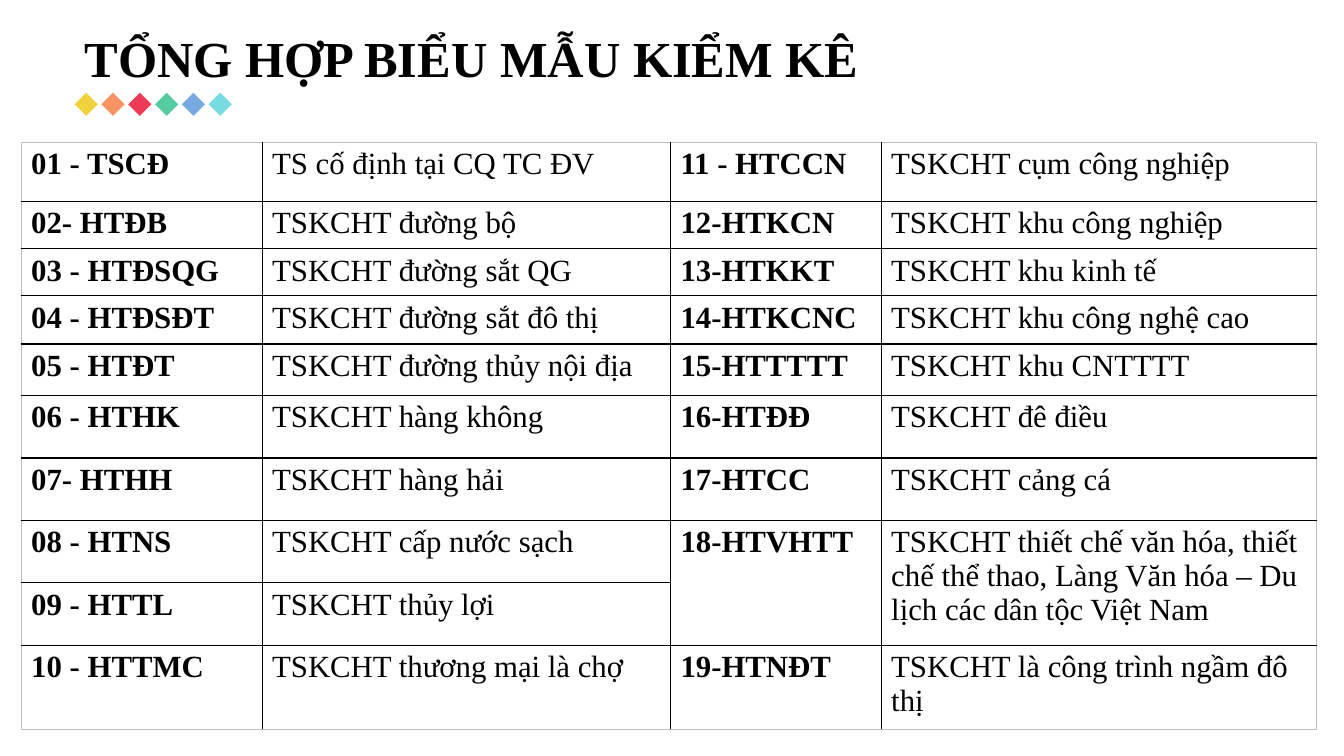
from lxml import etree
from pptx import Presentation
from pptx.dml.color import RGBColor
from pptx.enum import shapes, text
from pptx.oxml.ns import qn
from pptx.util import Inches, Pt

FONT = "Times New Roman"
BLACK, GREY = "000000", "BFBFBF"
TITLE = "TỔNG HỢP BIỂU MẪU KIỂM KÊ"
DIAMONDS = ["F0D23F", "F79465", "ED3B55", "54CBA0", "78AAE1", "77DBE1"]
COLUMN_WIDTHS = [2.39, 4.05, 2.09, 4.32]
ROW_HEIGHTS = [0.59, 0.46, 0.46, 0.48, 0.51, 0.62, 0.62, 0.62, 0.62, 0.8]
FORMS = [
    ("01 - TSCĐ", "TS cố định tại CQ TC ĐV", "11 - HTCCN", "TSKCHT cụm công nghiệp"),
    ("02- HTĐB", "TSKCHT đường bộ", "12-HTKCN", "TSKCHT khu công nghiệp"),
    ("03 - HTĐSQG", "TSKCHT đường sắt QG", "13-HTKKT", "TSKCHT khu kinh tế"),
    ("04 - HTĐSĐT", "TSKCHT đường sắt đô thị", "14-HTKCNC", "TSKCHT khu công nghệ cao"),
    ("05 - HTĐT", "TSKCHT đường thủy nội địa", "15-HTTTTT", "TSKCHT khu CNTTTT"),
    ("06 - HTHK", "TSKCHT hàng không", "16-HTĐĐ", "TSKCHT đê điều"),
    ("07- HTHH", "TSKCHT hàng hải", "17-HTCC", "TSKCHT cảng cá"),
    ("08 - HTNS", "TSKCHT cấp nước sạch", "18-HTVHTT",
     "TSKCHT thiết chế văn hóa, thiết chế thể thao, Làng Văn hóa – Du lịch các dân tộc Việt Nam"),
    ("09 - HTTL", "TSKCHT thủy lợi", None, None),  # right half merges with the row above
    ("10 - HTTMC", "TSKCHT thương mại là chợ", "19-HTNĐT", "TSKCHT là công trình ngầm đô thị"),
]


def color(code):
    return RGBColor.from_string(code)


def write(para, words, size, bold):
    para.text = words
    para.font.name = FONT
    para.font.size = Pt(size)
    para.font.bold = bold
    para.font.color.rgb = color(BLACK)


def set_borders(cell, sides):
    """Draw 1 pt borders; sides maps L, R, T, B to a colour."""
    properties = cell._tc.get_or_add_tcPr()
    for side, code in sides.items():
        line = etree.SubElement(properties, qn(f"a:ln{side}"), w=str(Pt(1)))
        fill = etree.SubElement(line, qn("a:solidFill"))
        etree.SubElement(fill, qn("a:srgbClr"), val=code)


def add_title(page):
    box = page.shapes.add_textbox(Inches(0.74), Inches(0.21), Inches(8.13), Inches(0.71))
    frame = box.text_frame
    frame.word_wrap = True
    frame.vertical_anchor = text.MSO_ANCHOR.MIDDLE
    write(frame.paragraphs[0], TITLE, 36, True)


def add_diamonds(page):
    size, step = Inches(0.23), Inches(0.266)
    for index, code in enumerate(DIAMONDS):
        diamond = page.shapes.add_shape(
            shapes.MSO_SHAPE.DIAMOND, Inches(0.74) + index * step, Inches(0.92), size, size)
        diamond.shadow.inherit = False
        diamond.fill.solid()
        diamond.fill.fore_color.rgb = color(code)
        diamond.line.fill.background()


def add_forms_table(page):
    last_row, last_column = len(FORMS) - 1, len(COLUMN_WIDTHS) - 1
    table = page.shapes.add_table(
        len(FORMS), len(COLUMN_WIDTHS), Inches(0.21), Inches(1.41),
        Inches(sum(COLUMN_WIDTHS)), Inches(sum(ROW_HEIGHTS))).table
    table.first_row = table.horz_banding = False
    for column, width in zip(table.columns, COLUMN_WIDTHS):
        column.width = Inches(width)
    for row, height in zip(table.rows, ROW_HEIGHTS):
        row.height = Inches(height)
    for r, form in enumerate(FORMS):
        for c, words in enumerate(form):
            cell = table.cell(r, c)
            set_borders(cell, {
                "L": GREY if c == 0 else BLACK,
                "R": GREY if c == last_column else BLACK,
                "T": GREY if r == 0 else BLACK,
                "B": GREY if r == last_row else BLACK,
            })
            cell.fill.background()
            if words is None:
                table.cell(r - 1, c).merge(cell)
            else:
                write(cell.text_frame.paragraphs[0], words, 22, c % 2 == 0)


def main():
    deck = Presentation()
    deck.slide_width, deck.slide_height = Inches(13.33), Inches(7.5)
    page = deck.slides.add_slide(deck.slide_layouts[6])
    add_title(page)
    add_diamonds(page)
    add_forms_table(page)
    deck.save("out.pptx")


if __name__ == "__main__":
    main()
